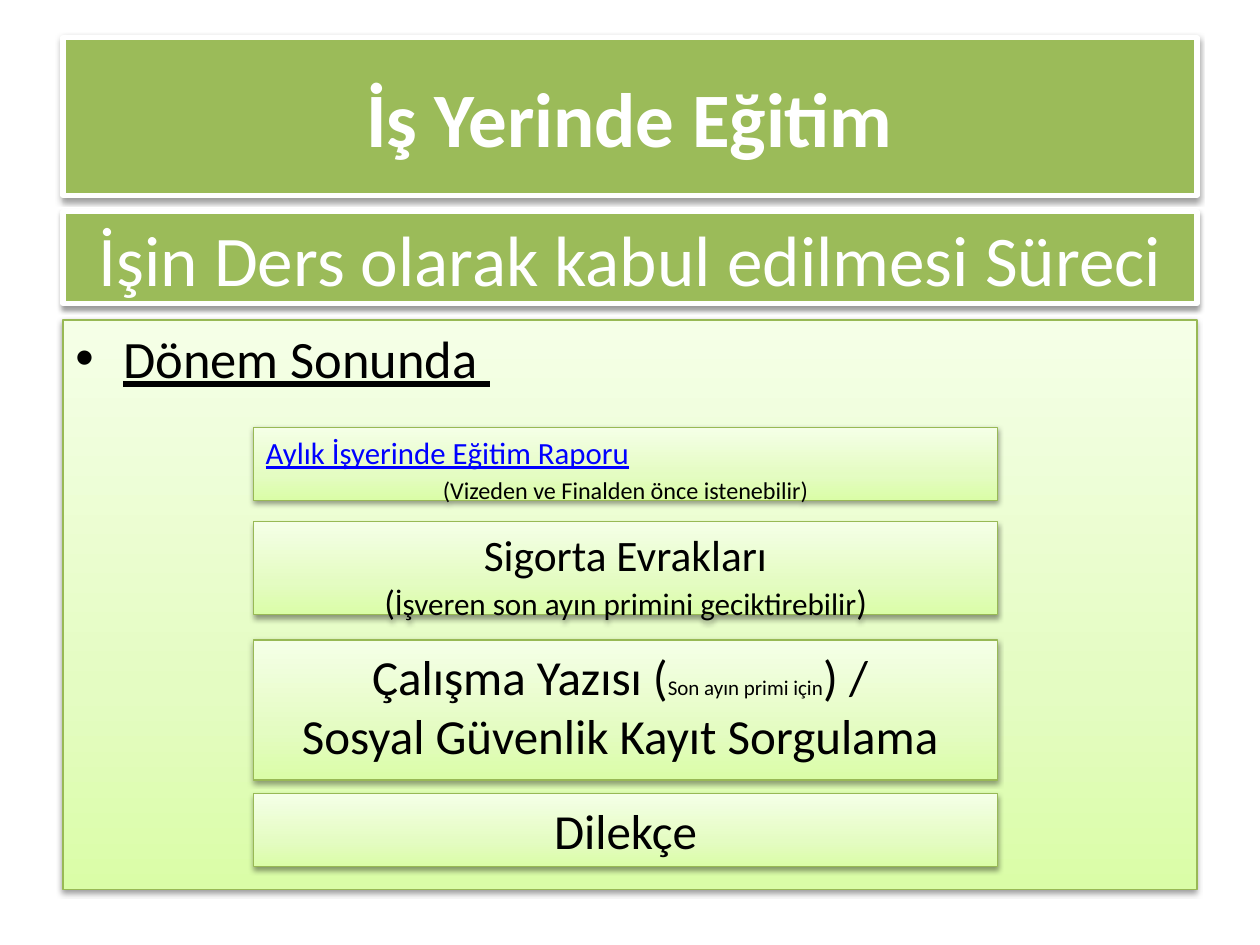
from copy import deepcopy
from dataclasses import dataclass

from lxml.etree import SubElement
from pptx import Presentation
from pptx.dml.color import RGBColor
from pptx.enum.shapes import MSO_SHAPE as Shape
from pptx.enum.text import MSO_ANCHOR as Anchor, PP_ALIGN as Align
from pptx.oxml.ns import qn
from pptx.util import Inches, Pt


@dataclass(frozen=True)
class Theme:
    """Colours, font and type sizes of the deck."""
    green: str = "9BBB59"
    edge: str = "98B955"
    white: str = "FFFFFF"
    black: str = "000000"
    link: str = "0000FF"
    fade: tuple = ((0, "DAFDA7"), (0.35, "E4FCC2"), (1, "F5FFE7"))
    font: str = "Calibri"
    title: float = 44
    subtitle: float = 40.7
    heading: float = 30
    step: float = 28
    small_step: float = 24.8
    bracket: float = 20.1
    remark: float = 17.8
    report: float = 17.6
    hint: float = 13.8
    aside: float = 12


class SlideBuilder:
    """Draws styled boxes on a grid of 20 columns and 15 rows."""
    columns, rows = 20, 15

    def __init__(self, theme):
        self.theme = theme
        self.deck = Presentation()
        self.deck.slide_width, self.deck.slide_height = Inches(10), Inches(7.5)
        self.page = self.deck.slides.add_slide(self.deck.slide_layouts[6])

    def box(self, column, row, width, height, line, weight):
        """Add a rectangle with an outline and a soft shadow below it."""
        unit_x = self.deck.slide_width / self.columns
        unit_y = self.deck.slide_height / self.rows
        box = self.page.shapes.add_shape(
            Shape.RECTANGLE, round(column * unit_x), round(row * unit_y),
            round(width * unit_x), round(height * unit_y))
        box.line.color.rgb = RGBColor.from_string(line)
        box.line.width = Pt(weight)
        box.shadow.inherit = False
        effects = box._element.spPr.find(qn("a:effectLst"))
        shadow = SubElement(effects, qn("a:outerShdw"), blurRad=str(Pt(3.1)),
                            dist=str(Pt(1.6)), dir="5400000", rotWithShape="0")
        colour = SubElement(shadow, qn("a:srgbClr"), val=self.theme.black)
        SubElement(colour, qn("a:alpha"), val="38000")
        box.text_frame.word_wrap = True
        box.text_frame.vertical_anchor = Anchor.TOP
        return box

    def banner(self, row, height, text, size, bold=False):
        """Add a full-width green band with centred white text."""
        box = self.box(1, row, 18, height, self.theme.white, 3)
        box.fill.solid()
        box.fill.fore_color.rgb = RGBColor.from_string(self.theme.green)
        box.text_frame.vertical_anchor = Anchor.MIDDLE
        para = box.text_frame.paragraphs[0]
        self.add_spans(para, [(text, size)], self.theme.white)
        para.runs[0].font.bold = bold

    def panel(self, column, row, width, height):
        """Add a box with the pale green gradient and return its text frame."""
        box = self.box(column, row, width, height, self.theme.edge, 0.75)
        box.fill.gradient()
        box.fill.gradient_angle = 90
        stops = next(box._element.spPr.iter(qn("a:gsLst")))
        stops.append(deepcopy(stops[0]))
        for stop, (position, colour) in zip(box.fill.gradient_stops, self.theme.fade):
            stop.position = position
            stop.color.rgb = RGBColor.from_string(colour)
        return box.text_frame

    def step(self, row, height, *lines):
        """Add one centred step box, a list of spans for each line."""
        frame = self.panel(4.02, row, 11.82, height)
        para = frame.paragraphs[0]
        for number, spans in enumerate(lines):
            if number:
                para.add_line_break()
            self.add_spans(para, spans)
        self.space(para)
        return frame

    def add_spans(self, para, spans, colour=None, align=Align.CENTER, underline=False):
        """Append (text, size) spans to a paragraph."""
        para.alignment = align
        for text, size in spans:
            span = para.add_run()
            span.text = text
            font = span.font
            font.name, font.size, font.underline = self.theme.font, Pt(size), underline
            font.color.rgb = RGBColor.from_string(colour or self.theme.black)

    def space(self, para):
        """Set the space before a paragraph to a fifth of a line."""
        before = SubElement(para._p.get_or_add_pPr(), qn("a:spcBef"))
        SubElement(before, qn("a:spcPct"), val="20000")

    def bullet(self, para):
        """Give a paragraph a round bullet and a hanging indent."""
        props = para._p.get_or_add_pPr()
        props.set("marL", str(Inches(0.38)))
        props.set("indent", str(Inches(-0.38)))
        SubElement(props, qn("a:buFont"), typeface="Arial")
        SubElement(props, qn("a:buChar"), char="•")


def main():
    """Build the slide and save it."""
    theme = Theme()
    slide = SlideBuilder(theme)
    slide.banner(0.6, 2.5, "İş Yerinde Eğitim", theme.title, bold=True)
    slide.banner(3.36, 1.46, "İşin Ders olarak kabul edilmesi Süreci", theme.subtitle)

    heading = slide.panel(1, 5.08, 18, 9.04).paragraphs[0]
    slide.add_spans(heading, [("Dönem Sonunda ", theme.heading)],
                    align=Align.JUSTIFY, underline=True)
    slide.space(heading)
    slide.bullet(heading)

    report = slide.step(6.78, 1.16)
    slide.add_spans(report.paragraphs[0],
                    [("Aylık İşyerinde Eğitim Raporu", theme.report)],
                    theme.link, Align.LEFT, underline=True)
    hint = report.add_paragraph()
    slide.add_spans(hint, [("(Vizeden ve Finalden önce istenebilir)", theme.hint)])
    slide.space(hint)

    slide.step(8.28, 1.48,
               [("Sigorta Evrakları", theme.small_step)],
               [("(", theme.bracket),
                ("İşveren son ayın primini geciktirebilir", theme.remark),
                (")", theme.bracket)])
    slide.step(10.16, 2.22,
               [("Çalışma Yazısı (", theme.step),
                ("Son ayın primi için", theme.aside),
                (") / ", theme.step)],
               [("Sosyal Güvenlik Kayıt Sorgulama ", theme.step)])
    slide.step(12.6, 1.16, [("Dilekçe", theme.step)])
    slide.deck.save("out.pptx")


if __name__ == "__main__":
    main()
